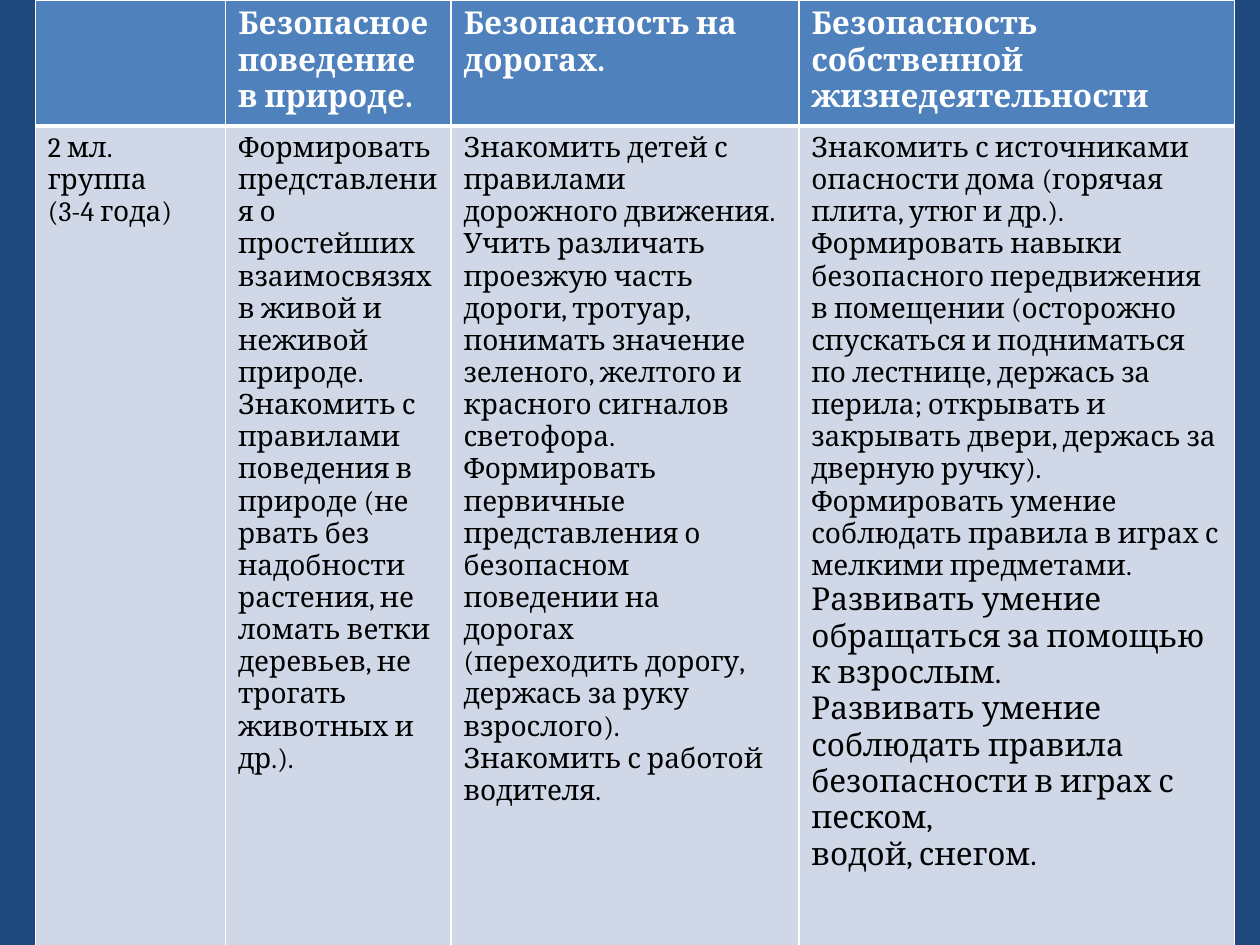
from lxml.etree import SubElement
from pptx import Presentation
from pptx.dml.color import RGBColor
from pptx.oxml.ns import qn
from pptx.util import Inches, Pt

HEADINGS = [
    "",
    "Безопасное поведение в природе.",
    "Безопасность на дорогах.",
    "Безопасность собственной жизнедеятельности",
]
GROUP = ["2 мл. группа", "(3-4 года)"]
NATURE = [
    "Формировать представления о",
    "простейших взаимосвязях в живой и неживой природе. Знакомить с",
    "правилами поведения в природе (не рвать без надобности растения, не",
    "ломать ветки деревьев, не трогать животных и др.).",
]
ROADS = [
    "Знакомить детей с правилами дорожного движения.",
    "Учить различать проезжую часть дороги, тротуар, понимать значение",
    "зеленого, желтого и красного сигналов светофора.",
    "Формировать первичные представления о безопасном поведении на",
    "дорогах",
    "(переходить дорогу, держась за руку взрослого).",
    "Знакомить с работой водителя.",
]
OWN_SAFETY = [
    "Знакомить с источниками опасности дома (горячая плита, утюг и др.).",
    "Формировать навыки безопасного передвижения в помещении (осторожно "
    "спускаться и подниматься по лестнице, держась за перила; открывать и "
    "закрывать двери, держась за дверную ручку).",
    "Формировать умение соблюдать правила в играх с мелкими предметами.",
]
OWN_SAFETY_LARGE = [
    "Развивать умение обращаться за помощью к взрослым.",
    "Развивать умение соблюдать правила безопасности в играх с песком,",
    "водой, снегом.",
]

THEME = {
    "font": "Cambria",
    "background": "1F497D",
    "header": "4F81BD",
    "body": "D0D8E8",
    "light": "FFFFFF",
    "dark": "000000",
    "large": 18,
    "small": 16,
    "rule": 1,
    "header_rule": 3,
}
COLUMN_WIDTHS = [1.51, 1.79, 2.76, 3.46]
ROW_HEIGHTS = [1, 6.14]
LEFT, TOP = 0.28, 0
BODY_BOTTOM_MARGIN = 0.65


def color(role):
    return RGBColor.from_string(THEME[role])


def sized(texts, size):
    return [(text, size) for text in texts]


def draw_borders(cell, bottom):
    properties = cell._tc.get_or_add_tcPr()
    widths = {"a:lnL": "rule", "a:lnR": "rule", "a:lnT": "rule", "a:lnB": bottom}
    for side, width in widths.items():
        line = SubElement(properties, qn(side), w=str(Pt(THEME[width])))
        fill = SubElement(line, qn("a:solidFill"))
        SubElement(fill, qn("a:srgbClr"), val=THEME["light"])


def fill_cell(cell, paragraphs, fill, ink, bold, bottom):
    draw_borders(cell, bottom)
    cell.fill.solid()
    cell.fill.fore_color.rgb = color(fill)
    cell.text_frame.text = "\n".join(text for text, size in paragraphs)
    for paragraph, (text, size) in zip(cell.text_frame.paragraphs, paragraphs):
        for run in paragraph.runs:
            run.font.name = THEME["font"]
            run.font.size = Pt(THEME[size])
            run.font.bold = bold
            run.font.color.rgb = color(ink)


def main():
    presentation = Presentation()
    presentation.slide_width, presentation.slide_height = Inches(10), Inches(7.5)
    slide = presentation.slides.add_slide(presentation.slide_layouts[6])
    slide.background.fill.solid()
    slide.background.fill.fore_color.rgb = color("background")

    table = slide.shapes.add_table(
        len(ROW_HEIGHTS), len(COLUMN_WIDTHS), Inches(LEFT), Inches(TOP),
        Inches(sum(COLUMN_WIDTHS)), Inches(sum(ROW_HEIGHTS)),
    ).table
    for column, width in zip(table.columns, COLUMN_WIDTHS):
        column.width = Inches(width)
    for row, height in zip(table.rows, ROW_HEIGHTS):
        row.height = Inches(height)

    for cell, heading in zip(table.rows[0].cells, HEADINGS):
        fill_cell(cell, [(heading, "large")], "header", "light", True, "header_rule")

    goals = [sized(texts, "small") for texts in (GROUP, NATURE, ROADS, OWN_SAFETY)]
    goals[-1] += sized(OWN_SAFETY_LARGE, "large")
    for cell, paragraphs in zip(table.rows[1].cells, goals):
        fill_cell(cell, paragraphs, "body", "dark", False, "rule")
        cell.margin_bottom = Inches(BODY_BOTTOM_MARGIN)

    presentation.save("out.pptx")


if __name__ == "__main__":
    main()
